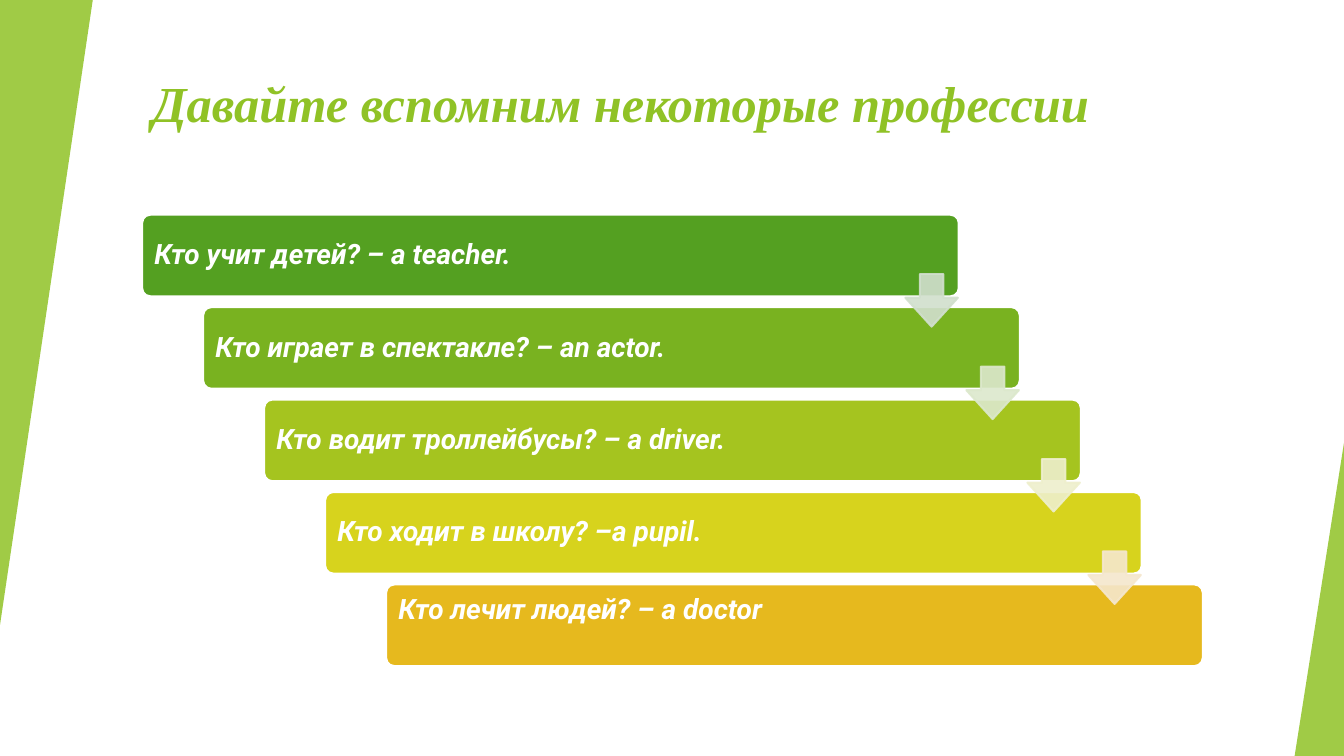
from lxml.etree import SubElement
from pptx import Presentation
from pptx.dml.color import RGBColor
from pptx.enum.shapes import MSO_SHAPE
from pptx.enum.text import MSO_ANCHOR, PP_ALIGN
from pptx.oxml.ns import qn
from pptx.util import Inches, Pt

COLORS = {"accent": "90C226", "white": "FFFFFF"}
TITLE = "Давайте вспомним некоторые профессии"
QUESTIONS = [
    ("Кто учит детей? – a teacher.", "54A021"),
    ("Кто играет в спектакле? – an actor.", "79B220"),
    ("Кто водит троллейбусы? – a driver.", "A5C41F"),
    ("Кто ходит в школу? –a pupil.", "D7D31D"),
    ("Кто лечит людей? – a doctor", "E6B91E"),
]
ARROW_COLORS = ["D1DFCD", "DCE8CC", "EEEFCC", "F5E7CD"]
STEP_X, STEP_Y = 0.605, 0.917


class ProfessionSlide:
    def __init__(self, presentation):
        self.slide = presentation.slides.add_slide(presentation.slide_layouts[5])

    def format_text(self, text_frame, font_name, size, color):
        paragraph = text_frame.paragraphs[0]
        paragraph.alignment = PP_ALIGN.LEFT
        font = paragraph.font
        font.name, font.size = font_name, Pt(size)
        font.bold = font.italic = True
        font.color.rgb = RGBColor.from_string(color)
        return paragraph

    def title(self, text, left, top, width, height):
        title = self.slide.shapes.title
        title.left, title.top = Inches(left), Inches(top)
        title.width, title.height = Inches(width), Inches(height)
        title.text_frame.text = text
        title.text_frame.vertical_anchor = MSO_ANCHOR.TOP
        self.format_text(title.text_frame, "Times New Roman", 36, COLORS["accent"])

    def shape(self, kind, left, top, width, height, color, opacity=100, outline=None, adjustments=()):
        """Add a filled preset shape; opacity is a percentage for fill and outline."""
        shape = self.slide.shapes.add_shape(
            kind, Inches(left), Inches(top), Inches(width), Inches(height))
        shape.shadow.inherit = False
        for index, value in enumerate(adjustments):
            shape.adjustments[index] = value
        shape.fill.solid()
        shape.fill.fore_color.rgb = RGBColor.from_string(color)
        if outline:
            shape.line.color.rgb = RGBColor.from_string(outline)
            shape.line.width = Pt(1.5)
        else:
            shape.line.fill.background()
        if opacity < 100:
            for color_element in shape.element.spPr.iter(qn("a:srgbClr")):
                SubElement(color_element, qn("a:alpha"), val=str(opacity * 1000))
        return shape

    def side_triangle(self, left, top, width, height, rotation=0):
        triangle = self.shape(MSO_SHAPE.ISOSCELES_TRIANGLE, left, top, width, height,
                              COLORS["accent"], opacity=85, adjustments=[1])
        triangle.rotation = rotation

    def question(self, text, left, top, color, anchor):
        card = self.shape(MSO_SHAPE.ROUNDED_RECTANGLE, left, top, 8.1, 0.81, color,
                          outline=COLORS["white"], adjustments=[0.1])
        text_frame = card.text_frame
        text_frame.word_wrap = True
        text_frame.vertical_anchor = anchor
        text_frame.margin_left = text_frame.margin_right = Inches(0.1)
        text_frame.margin_top = text_frame.margin_bottom = Inches(0.08)
        text_frame.text = text
        paragraph = self.format_text(text_frame, "Roboto", 20, COLORS["white"])
        paragraph.line_spacing = 0.9

    def arrow(self, left, top, color):
        self.shape(MSO_SHAPE.DOWN_ARROW, left, top, 0.52, 0.52, color,
                   opacity=90, outline=color, adjustments=[0.45, 0.55])


def main():
    presentation = Presentation()
    presentation.slide_width, presentation.slide_height = Inches(13.33), Inches(7.5)
    page = ProfessionSlide(presentation)
    page.title(TITLE, 1.41, 0.67, 11.15, 1.2)
    page.side_triangle(0, 0, 0.92, 6.2, rotation=180)
    page.side_triangle(12.84, 4.39, 0.49, 3.11)
    for index, (text, color) in enumerate(QUESTIONS):
        is_last = index == len(QUESTIONS) - 1
        page.question(text, 1.41 + index * STEP_X, 2.13 + index * STEP_Y, color,
                      MSO_ANCHOR.TOP if is_last else MSO_ANCHOR.MIDDLE)
    for index, color in enumerate(ARROW_COLORS):
        page.arrow(8.98 + index * STEP_X, 2.72 + index * STEP_Y, color)
    presentation.save("out.pptx")


if __name__ == "__main__":
    main()
